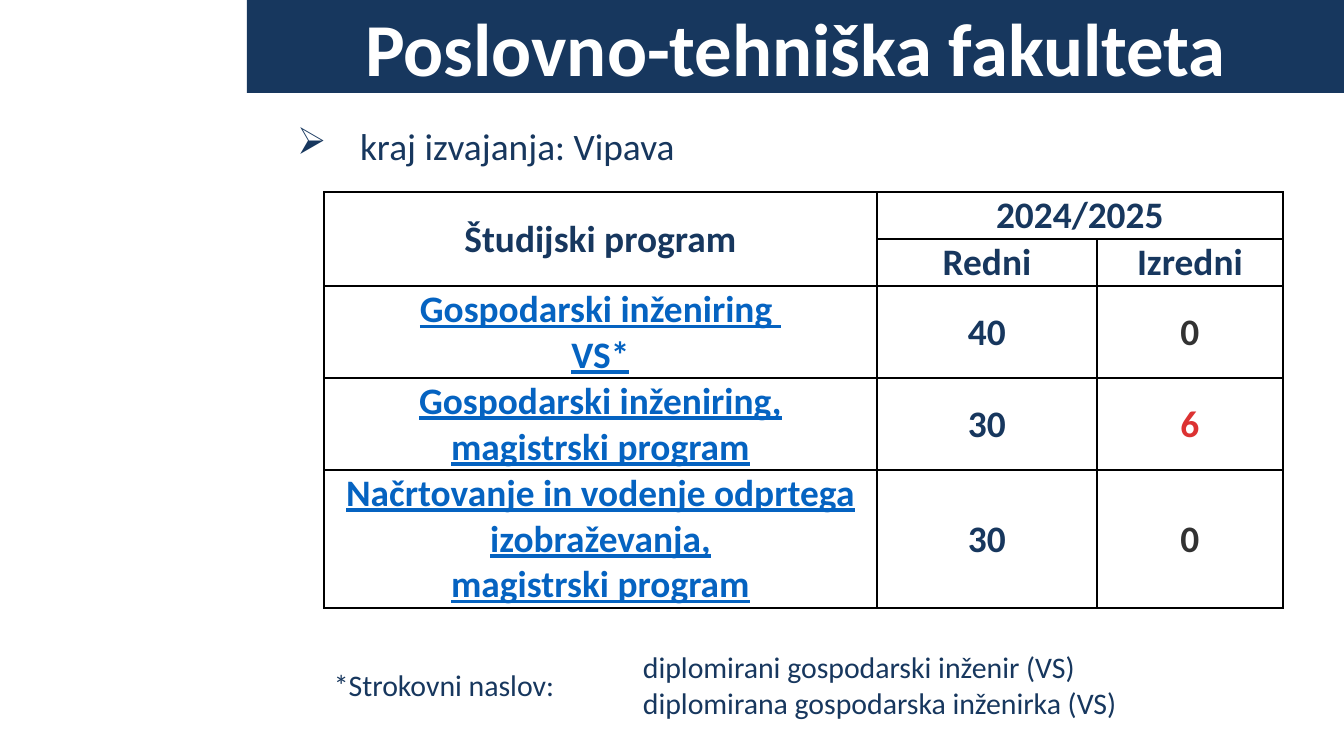
"""Build the slide on study places at Poslovno-tehniška fakulteta."""
import pptx
import pptx.util
import pptx.dml.color
import pptx.enum.shapes
import pptx.enum.text
import pptx.oxml
from dataclasses import dataclass
from pptx.oxml.ns import nsdecls


@dataclass(frozen=True)
class Theme:
    font: str = "Calibri"
    navy: str = "17375E"
    link: str = "0563C1"
    gray: str = "323232"
    red: str = "DC3232"
    white: str = "FFFFFF"
    line: str = "000000"
    big: int = 40
    body: int = 20
    small: int = 16


THEME = Theme()
SIZE = (1344, 756)
TITLE = "Poslovno-tehniška fakulteta"
PLACE = "kraj izvajanja: Vipava"
HEADS = [
    ["Študijski program", "2024/2025", ""],
    ["", "Redni", "Izredni"],
]
COURSES = [
    ["Gospodarski inženiring \nVS*", "40", "0"],
    ["Gospodarski inženiring,\nmagistrski program", "30", "6"],
    ["Načrtovanje in vodenje odprtega izobraževanja,\nmagistrski program", "30", "0"],
]
NOTES = [[
    "*Strokovni naslov:",
    "diplomirani gospodarski inženir (VS)\ndiplomirana gospodarska inženirka (VS)",
]]
MID = pptx.enum.text.MSO_ANCHOR.MIDDLE
CENTER = pptx.enum.text.PP_ALIGN.CENTER
LEFT = pptx.enum.text.PP_ALIGN.LEFT


def px(num):
    return pptx.util.Emu(round(num * 914400 / 134.4))


def rgb(hue):
    return pptx.dml.color.RGBColor.from_string(hue)


def write(frame, text, size, hue, align=LEFT, bold=False, under=False):
    frame.text = text
    for para in frame.paragraphs:
        para.alignment = align
        for run in para.runs:
            font = run.font
            font.name, font.size = THEME.font, pptx.util.Pt(size)
            font.bold, font.underline = bold, under
            font.color.rgb = rgb(hue)


def inset(part, left, top, right, base):
    part.margin_left, part.margin_top = px(left), px(top)
    part.margin_right, part.margin_bottom = px(right), px(base)


def border(cell):
    props = cell._tc.get_or_add_tcPr()
    for side in "LRTB":
        props.append(pptx.oxml.parse_xml(
            f'<a:ln{side} {nsdecls("a")} w="12700"><a:solidFill>'
            f'<a:srgbClr val="{THEME.line}"/></a:solidFill></a:ln{side}>'))


def grid(slide, left, top, cols, rows, pads, lined):
    table = slide.shapes.add_table(
        len(rows), len(cols), px(left), px(top), px(sum(cols)), px(sum(rows))).table
    table.first_row = table.horz_banding = False
    for col, width in zip(table.columns, cols):
        col.width = px(width)
    for row, height in zip(table.rows, rows):
        row.height = px(height)
    for cell in table.iter_cells():
        inset(cell, *pads)
        cell.vertical_anchor = MID
        if lined:
            border(cell)
        cell.fill.background()
    return table


def add_title(slide):
    bar = slide.shapes.add_shape(
        pptx.enum.shapes.MSO_SHAPE.RECTANGLE, px(247), 0, px(1097), px(93))
    bar.shadow.inherit = False
    bar.fill.solid()
    bar.fill.fore_color.rgb = rgb(THEME.navy)
    bar.line.fill.background()
    frame = bar.text_frame
    inset(frame, 13, 13, 13, 13)
    frame.word_wrap, frame.vertical_anchor = True, MID
    write(frame, TITLE, THEME.big, THEME.white, CENTER, True)


def add_place(slide):
    frame = slide.shapes.add_textbox(px(280), px(110), px(1029), px(72)).text_frame
    frame.word_wrap = True
    inset(frame, 13, 13, 13, 13)
    write(frame, PLACE, THEME.body, THEME.navy)
    props = frame.paragraphs[0]._p.get_or_add_pPr()
    props.set("marL", str(px(67)))
    props.set("indent", str(px(-63)))
    for tag in (f'buClr {nsdecls("a")}><a:srgbClr val="{THEME.navy}"/></a:buClr>',
                f'buChar {nsdecls("a")} char="➢"/>'):
        props.append(pptx.oxml.parse_xml("<a:" + tag))


def add_courses(slide):
    table = grid(slide, 324, 192, (553, 220, 186), (47, 47, 92, 92, 138),
                 (1, 1, 1, 0), True)
    table.cell(0, 0).merge(table.cell(1, 0))
    table.cell(0, 1).merge(table.cell(0, 2))
    for r, row in enumerate(HEADS + COURSES):
        for c, text in enumerate(row):
            hue = THEME.navy
            name = r >= len(HEADS) and c == 0
            if name:
                hue = THEME.link
            elif r >= len(HEADS) and c == 2:
                hue = THEME.gray if text == "0" else THEME.red
            if text:
                write(table.cell(r, c).text_frame, text, THEME.body, hue,
                      CENTER, True, name)


def add_notes(slide):
    table = grid(slide, 324, 645, (309, 650), (82,), (10, 5, 10, 5), False)
    for c, text in enumerate(NOTES[0]):
        write(table.cell(0, c).text_frame, text, THEME.small, THEME.navy)


def main():
    deck = pptx.Presentation()
    deck.slide_width, deck.slide_height = map(px, SIZE)
    slide = deck.slides.add_slide(deck.slide_layouts[6])
    for step in (add_place, add_courses, add_notes, add_title):
        step(slide)
    deck.save("out.pptx")


if __name__ == "__main__":
    main()
